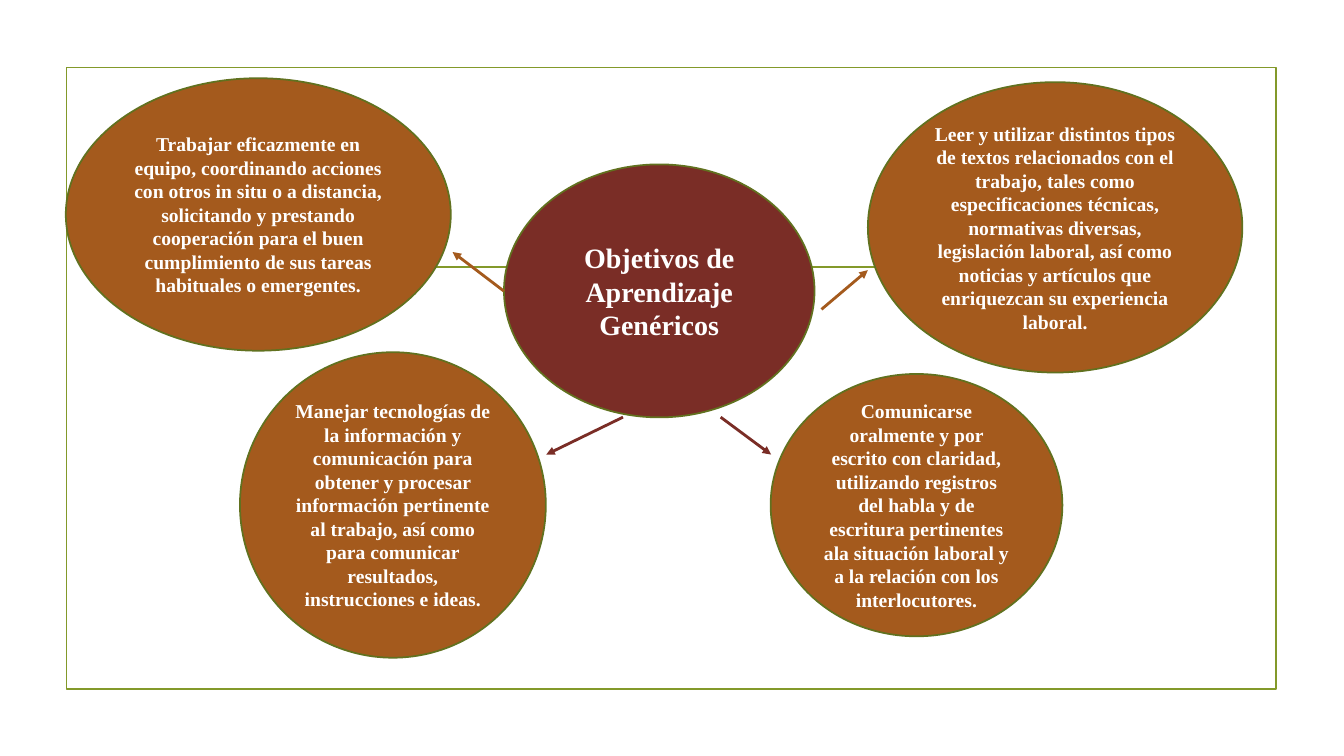
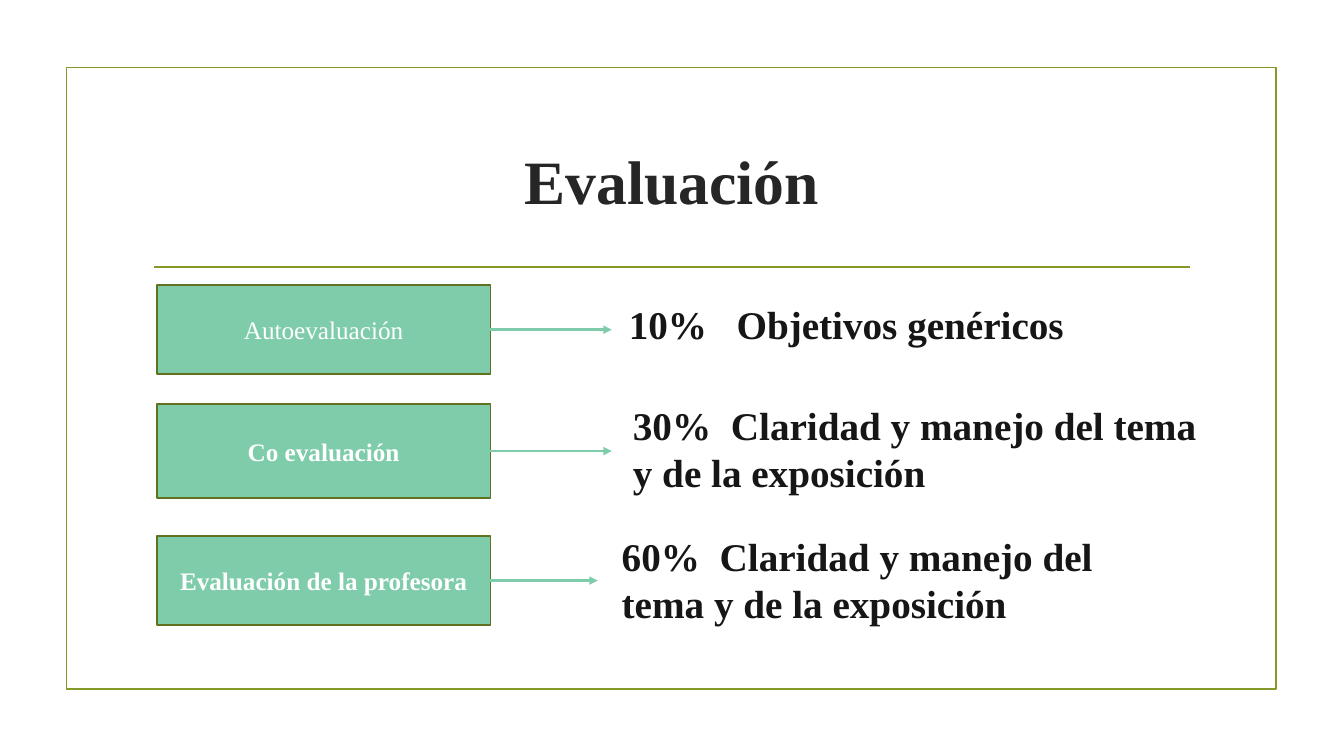
from typing import NamedTuple, Optional

from pptx import Presentation
from pptx.dml.color import RGBColor
from pptx.enum.shapes import MSO_CONNECTOR, MSO_SHAPE
from pptx.enum.text import MSO_ANCHOR, PP_ALIGN
from pptx.oxml.ns import qn
from pptx.util import Pt
from lxml.etree import SubElement

COLORS = {
    "frame": "83992A",
    "outline": "61711F",
    "center": "7A2D26",
    "goal": "A45A1D",
    "method": "7FCCAB",
    "title": "262626",
    "body": "161616",
    "white": "FFFFFF",
}
FONT = "Times New Roman"


class Area(NamedTuple):
    left: float
    top: float
    width: float
    height: float


class Goal(NamedTuple):
    area: Area
    text: str


class Arrow(NamedTuple):
    start: tuple[float, float]
    end: tuple[float, float]
    color: str


class Criterion(NamedTuple):
    method: str
    bold: bool
    top: float
    height: float
    arrow_end: float
    weight: str
    detail: str
    tab: float
    detail_area: Area


FRAME = Area(47.5, 48.2, 864, 444.2)
RULE_LEFT, RULE_RIGHT, RULE_TOP = 110.2, 850.3, 190.8
TITLE = Area(102.2, 77, 756, 103)
CENTER = Area(360, 117.4, 221.8, 180.7)
METHOD_LEFT, METHOD_WIDTH = 112, 238.3

GOALS = [
    Goal(Area(619.9, 58.7, 267.5, 207.4),
         "Leer y utilizar distintos tipos de textos relacionados con el trabajo, "
         "tales como especificaciones técnicas, normativas diversas, legislación "
         "laboral, así como noticias y artículos que enriquezcan su experiencia laboral."),
    Goal(Area(47, 55.9, 275, 194.6),
         "Trabajar eficazmente en equipo, coordinando acciones con otros in situ o a "
         "distancia, solicitando y prestando cooperación para el buen cumplimiento "
         "de sus tareas habituales o emergentes."),
    Goal(Area(171.4, 251.6, 218.5, 218.2),
         "Manejar tecnologías de la información y comunicación para obtener y procesar "
         "información pertinente al trabajo, así como para comunicar resultados, "
         "instrucciones e ideas."),
    Goal(Area(550.5, 267.1, 208.4, 187.4),
         "Comunicarse oralmente y por escrito con claridad, utilizando registros del "
         "habla y de escritura pertinentes ala situación laboral y a la relación con "
         "los interlocutores."),
]

GOAL_ARROWS = [
    Arrow((360, 208), (323.3, 180), "goal"),
    Arrow((586.8, 221), (619.9, 193), "goal"),
    Arrow((445, 298), (390.2, 324.7), "center"),
    Arrow((514.8, 298), (550.8, 324.7), "center"),
]

CRITERIA = [
    Criterion("Autoevaluación", False, 203.8, 63.4, 437, "10%",
              "Objetivos genéricos", 77, Area(442.1, 195.8, 439.2, 71.3)),
    Criterion("Co evaluación", True, 288.7, 67, 437, "30%",
              "Claridad y manejo del tema y de la exposición", 70,
              Area(445, 280.8, 436.3, 79.2)),
    Criterion("Evaluación de la profesora", True, 383, 63.4, 427, "60%",
              "Claridad y manejo del tema y de la exposición", 70,
              Area(437, 373.7, 387.4, 80.6)),
]


def rgb(name: str) -> RGBColor:
    return RGBColor.from_string(COLORS[name])


def points(area: Area) -> list:
    return [Pt(value) for value in area]


def write(shape, text: str, *, size: float, color: str = "white",
          bold: bool = True, align=PP_ALIGN.CENTER, tab: Optional[float] = None):
    frame = shape.text_frame
    frame.word_wrap = True
    frame.vertical_anchor = MSO_ANCHOR.MIDDLE
    para = frame.paragraphs[0]
    para.alignment = align
    if tab is not None:
        tabs = SubElement(para._p.get_or_add_pPr(), qn("a:tabLst"))
        SubElement(tabs, qn("a:tab"), pos=str(Pt(tab)), algn="l")
    span = para.add_run()
    span.text = text
    span.font.name = FONT
    span.font.size = Pt(size)
    span.font.bold = bold
    span.font.color.rgb = rgb(color)


def add_figure(page, kind, area: Area, fill: Optional[str] = None,
               outline: str = "outline"):
    shape = page.shapes.add_shape(kind, *points(area))
    shape.shadow.inherit = False
    if fill:
        shape.fill.solid()
        shape.fill.fore_color.rgb = rgb(fill)
    else:
        shape.fill.background()
    shape.line.color.rgb = rgb(outline)
    shape.line.width = Pt(1.25)
    return shape


def add_line(page, line: Arrow, width: float = 2, head: bool = True):
    connector = page.shapes.add_connector(
        MSO_CONNECTOR.STRAIGHT, *[Pt(value) for value in line.start + line.end])
    connector.line.color.rgb = rgb(line.color)
    connector.line.width = Pt(width)
    properties = connector._element.spPr
    if head:
        SubElement(properties.find(qn("a:ln")), qn("a:tailEnd"), type="triangle")
    SubElement(properties, qn("a:effectLst"))
    return connector


def add_page(deck, layout: int):
    """Add a slide with the shared frame and horizontal rule."""
    page = deck.slides.add_slide(deck.slide_layouts[layout])
    add_figure(page, MSO_SHAPE.RECTANGLE, FRAME, outline="frame")
    rule = Arrow((RULE_LEFT, RULE_TOP), (RULE_RIGHT, RULE_TOP), "frame")
    add_line(page, rule, width=1.25, head=False)
    return page


def add_goals_page(deck):
    page = add_page(deck, 6)
    center = add_figure(page, MSO_SHAPE.OVAL, CENTER, "center")
    write(center, "Objetivos de Aprendizaje Genéricos", size=20)
    for goal in GOALS:
        write(add_figure(page, MSO_SHAPE.OVAL, goal.area, "goal"), goal.text, size=14)
    for arrow in GOAL_ARROWS:
        add_line(page, arrow)


def add_evaluation_page(deck):
    page = add_page(deck, 5)
    title = page.shapes.title
    title.left, title.top, title.width, title.height = points(TITLE)
    write(title, "Evaluación", size=44, color="title")
    for item in CRITERIA:
        area = Area(METHOD_LEFT, item.top, METHOD_WIDTH, item.height)
        method = add_figure(page, MSO_SHAPE.RECTANGLE, area, "method")
        write(method, item.method, size=18, bold=item.bold)
        middle = item.top + item.height / 2
        start = (METHOD_LEFT + METHOD_WIDTH, middle)
        arrow = add_line(page, Arrow(start, (item.arrow_end, middle), "method"))
        arrow.begin_connect(method, 3)
        detail = page.shapes.add_textbox(*points(item.detail_area))
        write(detail, f"{item.weight}\t{item.detail}", size=28, color="body",
              align=PP_ALIGN.LEFT, tab=item.tab)


def main():
    deck = Presentation()
    deck.slide_width, deck.slide_height = Pt(960), Pt(540)
    add_goals_page(deck)
    add_evaluation_page(deck)
    deck.save("out.pptx")


if __name__ == "__main__":
    main()
